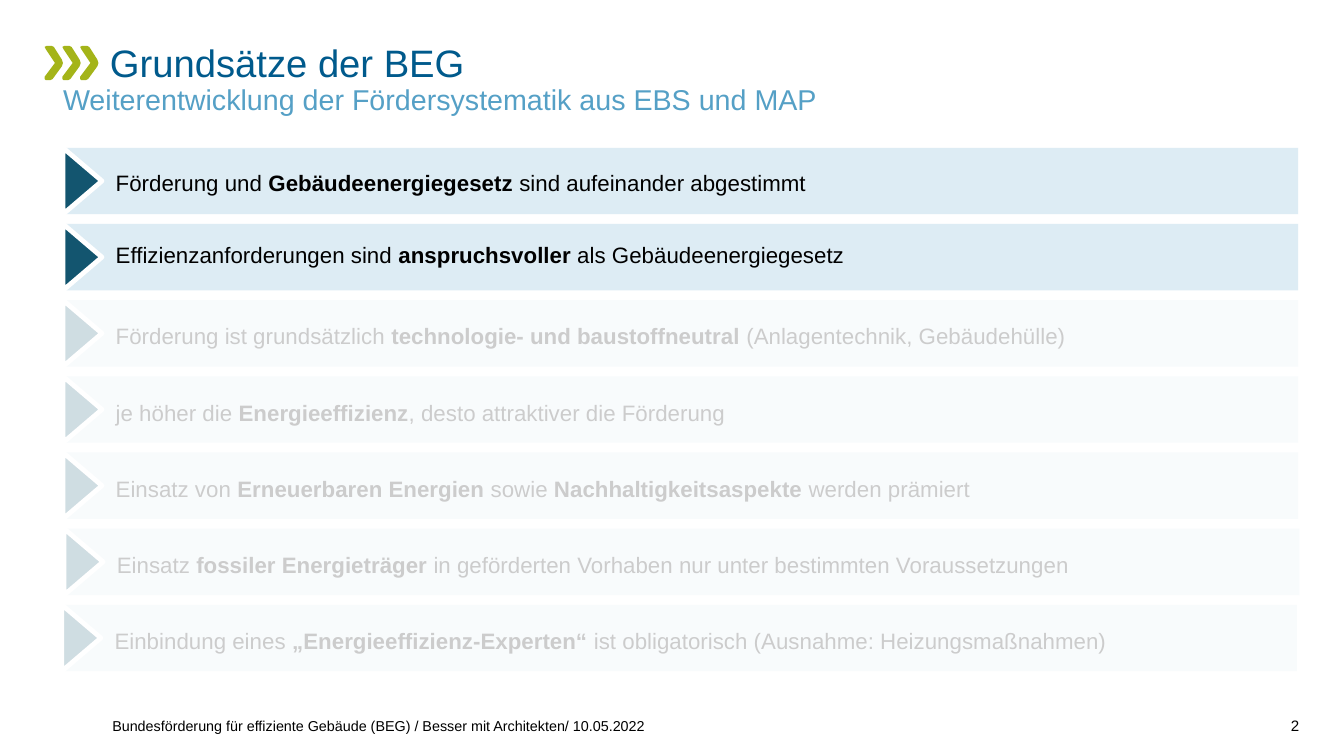
from dataclasses import dataclass

from lxml.etree import SubElement
from pptx import Presentation
from pptx.dml.color import RGBColor
from pptx.enum.shapes import MSO_SHAPE as SHAPE
from pptx.enum.text import MSO_ANCHOR as ANCHOR, PP_ALIGN as ALIGN
from pptx.oxml.ns import qn
from pptx.util import Inches, Pt


@dataclass(frozen=True)
class Theme:
    font: str = "Arial"
    title: str = "005A8C"
    subtitle: str = "55A0C6"
    text: str = "000000"
    bar: str = "DDECF4"
    arrow: str = "13556F"
    accent: str = "A4B419"
    white: str = "FFFFFF"
    title_size: float = 24
    subtitle_size: float = 18
    row_size: float = 14
    footer_size: float = 9
    number_size: float = 9.5


THEME = Theme()

# Left edge, line spacing, text runs; every second run is bold
PRINCIPLES = [
    (0.56, 1.1, ["Förderung und ", "Gebäudeenergiegesetz ", "sind aufeinander abgestimmt"]),
    (0.56, 0.8, ["Effizienzanforderungen sind ", "anspruchsvoller",
                 " als Gebäudeenergiegesetz"]),
    (0.56, 1.2, ["Förderung ist grundsätzlich ", "technologie- und baustoffneutral",
                 " (Anlagentechnik, Gebäudehülle)"]),
    (0.56, 1.2, ["je höher die ", "Energieeffizienz", ", desto attraktiver die Förderung"]),
    (0.56, 1.2, ["Einsatz von ", "Erneuerbaren Energien ", "sowie ",
                 "Nachhaltigkeitsaspekte", " werden prämiert"]),
    (0.57, 1.2, ["Einsatz ", "fossiler Energieträger ",
                 "in geförderten Vorhaben nur unter bestimmten Voraussetzungen"]),
    (0.55, 1.2, ["Einbindung eines ", "„Energieeffizienz-Experten“ ",
                 "ist obligatorisch (Ausnahme: Heizungsmaßnahmen)"]),
]


def inches(*values):
    return [Inches(v) for v in values]


def paint(sp, color, line=None, width=0):
    sp.shadow.inherit = False
    sp.fill.solid()
    sp.fill.fore_color.rgb = RGBColor.from_string(color)
    if line:
        sp.line.color.rgb = RGBColor.from_string(line)
        sp.line.width = Pt(width)
    else:
        sp.line.fill.background()


def write(sp, runs, size, color, spacing=1.0, align=ALIGN.LEFT,
          anchor=ANCHOR.TOP, insets=(0, 0, 0, 0)):
    tf = sp.text_frame
    left, top, right, bottom = inches(*insets)
    frame = {"word_wrap": True, "vertical_anchor": anchor, "margin_left": left,
             "margin_top": top, "margin_right": right, "margin_bottom": bottom}
    for name, value in frame.items():
        setattr(tf, name, value)
    p = tf.paragraphs[0]
    p.alignment, p.line_spacing = align, spacing
    for i, text in enumerate(runs):
        r = p.add_run()
        r.text = text
        style = {"name": THEME.font, "size": Pt(size), "bold": i % 2 == 1}
        for name, value in style.items():
            setattr(r.font, name, value)
        r.font.color.rgb = RGBColor.from_string(color)


def add_label(s, box, text, size, color, **layout):
    write(s.shapes.add_textbox(*inches(*box)), [text], size, color, **layout)


def add_header(s, x, y, w):
    # Row of chevrons before the title
    outline = [(0.02, 0), (0.06, 0), (0.08, 0.01), (0.15, 0.12), (0.16, 0.15),
               (0.15, 0.18), (0.07, 0.29), (0.05, 0.3), (0.01, 0.3), (0, 0.29),
               (0, 0.27), (0.09, 0.15), (0.01, 0.03), (0, 0.01)]
    for i in range(3):
        left, top = x - 0.16 + i * 0.155, y + 0.03
        points = [inches(left + dx, top + dy) for dx, dy in outline]
        builder = s.shapes.build_freeform(*points[0], scale=1.0)
        builder.add_line_segments(points[1:], close=True)
        paint(builder.convert_to_shape(), THEME.accent)

    # Title and subtitle
    add_label(s, (x + 0.41, y, w - 0.41, 0.41), "Grundsätze der BEG",
              THEME.title_size, THEME.title, spacing=0.95)
    add_label(s, (x, y + 0.37, w, 0.36),
              "Weiterentwicklung der Fördersystematik aus EBS und MAP",
              THEME.subtitle_size, THEME.subtitle, spacing=0.95)


def add_principle(s, x, y, w, h, spacing, runs):
    bar = s.shapes.add_shape(SHAPE.RECTANGLE, *inches(x, y, w, h))
    paint(bar, THEME.bar)
    write(bar, runs, THEME.row_size, THEME.text, spacing,
          anchor=ANCHOR.MIDDLE, insets=(0.45, 0.05, 0.06, 0.05))
    arrow = s.shapes.add_shape(SHAPE.PENTAGON, *inches(x - 0.01, y, 0.34, h))
    arrow.adjustments[0] = 1.0
    paint(arrow, THEME.arrow, THEME.white, 3)


def add_principles(s, y, w, h, pitch):
    for i, (x, spacing, runs) in enumerate(PRINCIPLES):
        add_principle(s, x, y + i * pitch, w, h, spacing, runs)


def add_veil(s, x, y, w, h, opacity):
    # Translucent cover that fades the later principles
    veil = s.shapes.add_shape(SHAPE.RECTANGLE, *inches(x, y, w, h))
    paint(veil, THEME.white)
    color = veil.fill._xPr.find(qn("a:solidFill"))[0]
    SubElement(color, qn("a:alpha"), val=str(opacity * 1000))


def add_footer(s, x, y, w, h):
    number_w = 0.41
    add_label(s, (x, y, w - number_w, h),
              "Bundesförderung für effiziente Gebäude (BEG) / Besser mit Architekten/ 10.05.2022",
              THEME.footer_size, THEME.text, anchor=ANCHOR.BOTTOM)
    add_label(s, (x + w - number_w, y, number_w, h), "2",
              THEME.number_size, THEME.text, align=ALIGN.RIGHT, anchor=ANCHOR.BOTTOM)


def main():
    prs = Presentation()
    prs.slide_width, prs.slide_height = inches(11.73, 6.6)
    s = prs.slides.add_slide(prs.slide_layouts[6])
    add_header(s, 0.55, 0.37, 10.79)
    add_principles(s, 1.29, 10.77, 0.58, 0.665)
    add_veil(s, 0.39, 2.61, 11.14, 3.52, opacity=80)
    add_footer(s, 0.98, 6.13, 10.36, 0.28)
    prs.save("out.pptx")


if __name__ == "__main__":
    main()
